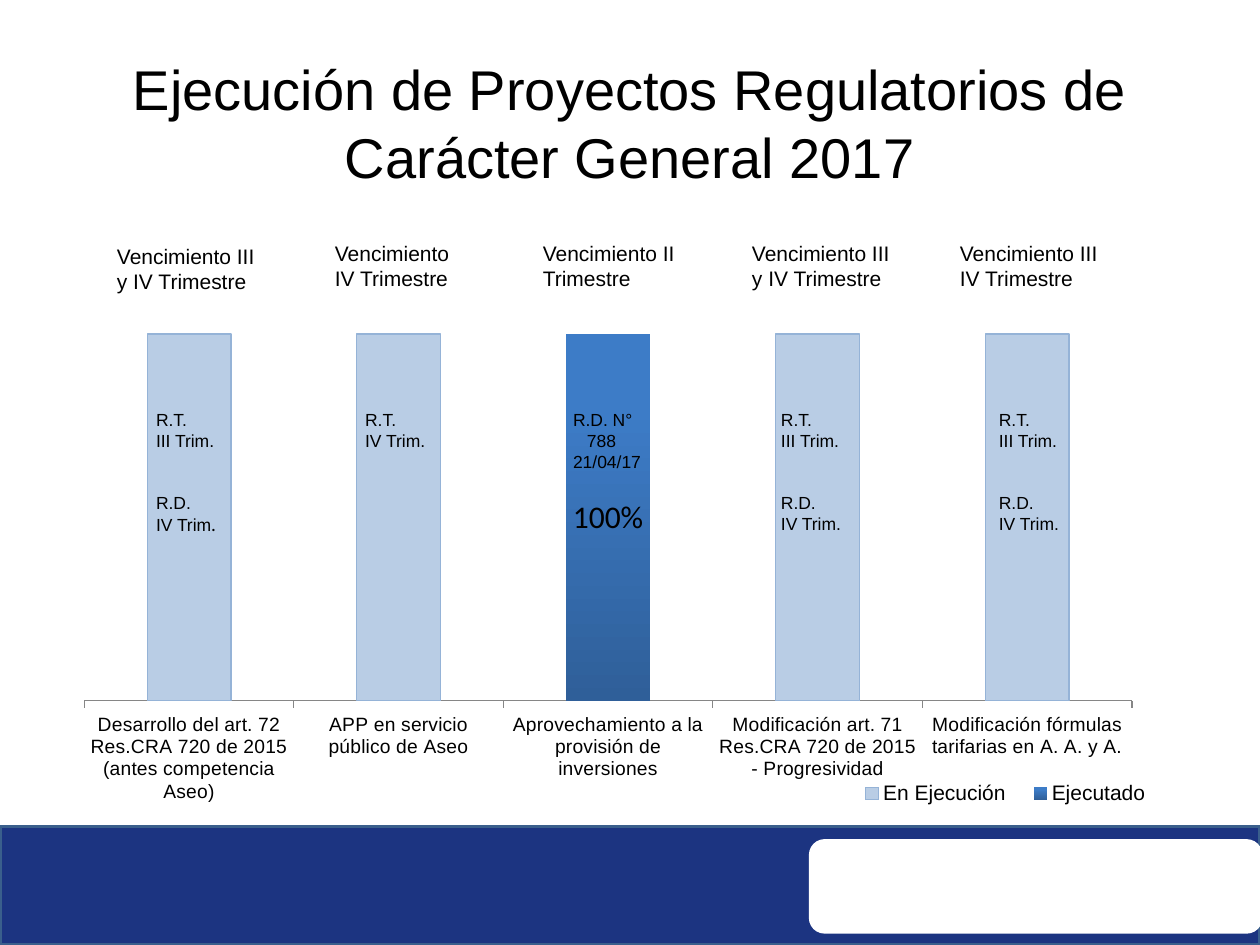
from lxml import etree
from pptx import Presentation
from pptx.chart.data import CategoryChartData
from pptx.dml.color import RGBColor
from pptx.enum.chart import XL_CHART_TYPE, XL_LEGEND_POSITION, XL_TICK_MARK
from pptx.enum.shapes import MSO_SHAPE
from pptx.enum.text import MSO_ANCHOR, PP_ALIGN
from pptx.oxml import parse_xml
from pptx.oxml.ns import nsdecls, qn
from pptx.util import Inches, Pt

STACKED = XL_CHART_TYPE.COLUMN_STACKED
RIGHT = XL_LEGEND_POSITION.RIGHT
TICK_OUT, TICK_NONE = XL_TICK_MARK.OUTSIDE, XL_TICK_MARK.NONE
CENTER, MIDDLE = PP_ALIGN.CENTER, MSO_ANCHOR.MIDDLE

TITLE = "Ejecución de Proyectos Regulatorios de Carácter General 2017"
PROJECTS = [
    "Desarrollo del art. 72 Res.CRA 720 de 2015 (antes competencia Aseo)",
    "APP en servicio público de Aseo",
    "Aprovechamiento a la provisión de inversiones",
    "Modificación art. 71 Res.CRA 720 de 2015 - Progresividad",
    "Modificación fórmulas tarifarias en A. A. y A.",
]
SERIES = [("Ejecutado", (0, 0, 1, 0, 0)), ("En Ejecución", (1, 1, 1, 1, 1))]
# left, top, width, text
DEADLINES = [
    (0.83, 1.88, 1.34, "Vencimiento III y IV Trimestre"),
    (2.56, 1.86, 1.26, "Vencimiento IV Trimestre"),
    (4.21, 1.86, 1.26, "Vencimiento II Trimestre"),
    (5.87, 1.86, 1.34, "Vencimiento III y IV Trimestre"),
    (7.52, 1.86, 1.34, "Vencimiento III IV Trimestre"),
]
# left, width, height, groups of lines; a line is a list of (text, size, font)
THIRD = [[("R.T.", 10, "Arial")], [("III Trim.", 10, "Arial")]]
FOURTH = [[("R.D.", 10, "Arial")], [("IV Trim.", 10, "Arial")]]
FOURTH_DOT = [[("R.D.", 10, "Arial")],
              [("IV Trim", 10, "Arial"), (".", 11, "Calibri")]]
MILESTONES = [
    (1.14, 0.8, 1.57, [THIRD, FOURTH_DOT]),
    (2.8, 0.8, 0.63, [[[("R.T.", 10, "Arial")], [("IV Trim.", 10, "Arial")]]]),
    (6.1, 0.8, 1.1, [THIRD, FOURTH]),
    (7.83, 0.8, 1.26, [THIRD, FOURTH]),
]
RESOLUTION = [("R.D. N°", 0), ("788", 0.11), ("21/04/17", 0)]  # text, indent


def color(hex_code):
    return RGBColor.from_string(hex_code)


def style_font(font, size, name="Arial"):
    font.size = Pt(size)
    font.name = name
    font.color.rgb = color("000000")


def add_span(para, text, size, name="Arial"):
    span = para.add_run()
    span.text = text
    style_font(span.font, size, name)
    return span


def add_box(page, left, top, width, height):
    box = page.shapes.add_textbox(*map(Inches, (left, top, width, height)))
    box.text_frame.word_wrap = True
    return box.text_frame


def next_para(frame, index):
    return frame.add_paragraph() if index else frame.paragraphs[0]


def add_panel(page, kind, bounds, fill, line=None):
    panel = page.shapes.add_shape(kind, *map(Inches, bounds))
    panel.shadow.inherit = False
    panel.fill.solid()
    panel.fill.fore_color.rgb = color(fill)
    if line:
        panel.line.color.rgb = color(line)
        panel.line.width = Pt(2)
    else:
        panel.line.fill.background()


def manual_layout(x, y, width, height, inner=False):
    target = '<c:layoutTarget val="inner"/>' if inner else ""
    return parse_xml(
        f'<c:layout {nsdecls("c")}><c:manualLayout>{target}'
        '<c:xMode val="edge"/><c:yMode val="edge"/>'
        f'<c:x val="{x}"/><c:y val="{y}"/><c:w val="{width}"/><c:h val="{height}"/>'
        '</c:manualLayout></c:layout>')


def add_title(page):
    title = page.shapes.title
    title.left, title.top, title.width, title.height = map(
        Inches, (0.04, 0.38, 9.92, 1.18))
    frame = title.text_frame
    frame.word_wrap = True
    frame.vertical_anchor = MIDDLE
    para = frame.paragraphs[0]
    para.alignment = CENTER
    span = add_span(para, TITLE, 32)
    effects = etree.Element(qn("a:effectLst"))
    shadow = etree.SubElement(effects, qn("a:outerShdw"), blurRad="38100",
                              dist="38100", dir="2700000", algn="tl")
    tint = etree.SubElement(shadow, qn("a:srgbClr"), val="000000")
    etree.SubElement(tint, qn("a:alpha"), val="43000")
    span.font.fill._xPr.find(qn("a:solidFill")).addnext(effects)


def add_progress_chart(page):
    data = CategoryChartData(number_format="0%")
    data.categories = PROJECTS
    for name, values in SERIES:
        data.add_series(name, values)
    bounds = map(Inches, (0.01, 2.49, 9.84, 4.03))
    chart = page.shapes.add_chart(STACKED, *bounds, data).chart
    chart.has_title = False
    style_font(chart.font, 18, "Calibri")

    plot = chart.plots[0]
    plot.gap_width, plot.overlap, plot.vary_by_categories = 150, 100, False
    done, running = plot.series
    fill = done.format.fill
    fill.gradient()
    fill.gradient_angle = 90
    for stop, (position, shade) in zip(fill.gradient_stops,
                                       [(0, "2F5F99"), (0.8, "3D7CC7")]):
        stop.position = position
        stop.color.rgb = color(shade)
    labels = done.data_labels
    labels.show_value = True
    labels.number_format = "0%;;"
    labels.number_format_is_linked = False
    style_font(labels.font, 18, "Calibri")
    running.format.fill.solid()
    running.format.fill.fore_color.rgb = color("B9CDE5")
    running.format.line.color.rgb = color("95B3D7")
    running.format.line.width = Pt(0.75)

    values = chart.value_axis
    values.minimum_scale, values.maximum_scale = 0.1, 1
    values.has_major_gridlines = False
    values.visible = False
    projects = chart.category_axis
    projects.major_tick_mark, projects.minor_tick_mark = TICK_OUT, TICK_NONE
    projects.format.line.color.rgb = color("868686")
    style_font(projects.tick_labels.font, 11)

    chart.has_legend = True
    legend = chart.legend
    legend.position = RIGHT
    legend.include_in_layout = False
    style_font(legend.font, 12)
    legend._element.find(qn("c:legendPos")).addnext(
        manual_layout(0.68, 0.9, 0.26, 0.09))
    area = chart._chartSpace.chart.plotArea
    for layout in area.findall(qn("c:layout")):
        area.remove(layout)
    area.insert(0, manual_layout(0.067, 0.04, 0.845, 0.722, inner=True))


def add_milestones(page):
    for left, width, height, groups in MILESTONES:
        frame = add_box(page, left, 3.2, width, height)
        lines = [(line, number > 0 and line is group[0])
                 for number, group in enumerate(groups) for line in group]
        for index, (line, starts_group) in enumerate(lines):
            para = next_para(frame, index)
            if starts_group:
                para.space_before = Pt(23)
            for span in line:
                add_span(para, *span)


def add_resolution(page):
    frame = add_box(page, 4.45, 3.2, 0.94, 0.47)
    for index, (text, indent) in enumerate(RESOLUTION):
        para = next_para(frame, index)
        para._p.get_or_add_pPr().set("marL", str(Inches(indent)))
        add_span(para, text, 10)


def main():
    deck = Presentation()
    deck.slide_width, deck.slide_height = Inches(10), Inches(7.5)
    page = deck.slides.add_slide(deck.slide_layouts[5])
    add_panel(page, MSO_SHAPE.RECTANGLE, (0, 6.56, 10, 0.94), "1C3481", "3A5F8C")
    add_panel(page, MSO_SHAPE.ROUNDED_RECTANGLE, (6.42, 6.66, 3.6, 0.75), "FFFFFF")
    add_title(page)
    add_progress_chart(page)
    for left, top, width, text in DEADLINES:
        frame = add_box(page, left, top, width, 0.5)
        add_span(frame.paragraphs[0], text, 12)
    add_resolution(page)
    add_milestones(page)
    deck.save("out.pptx")


if __name__ == "__main__":
    main()
